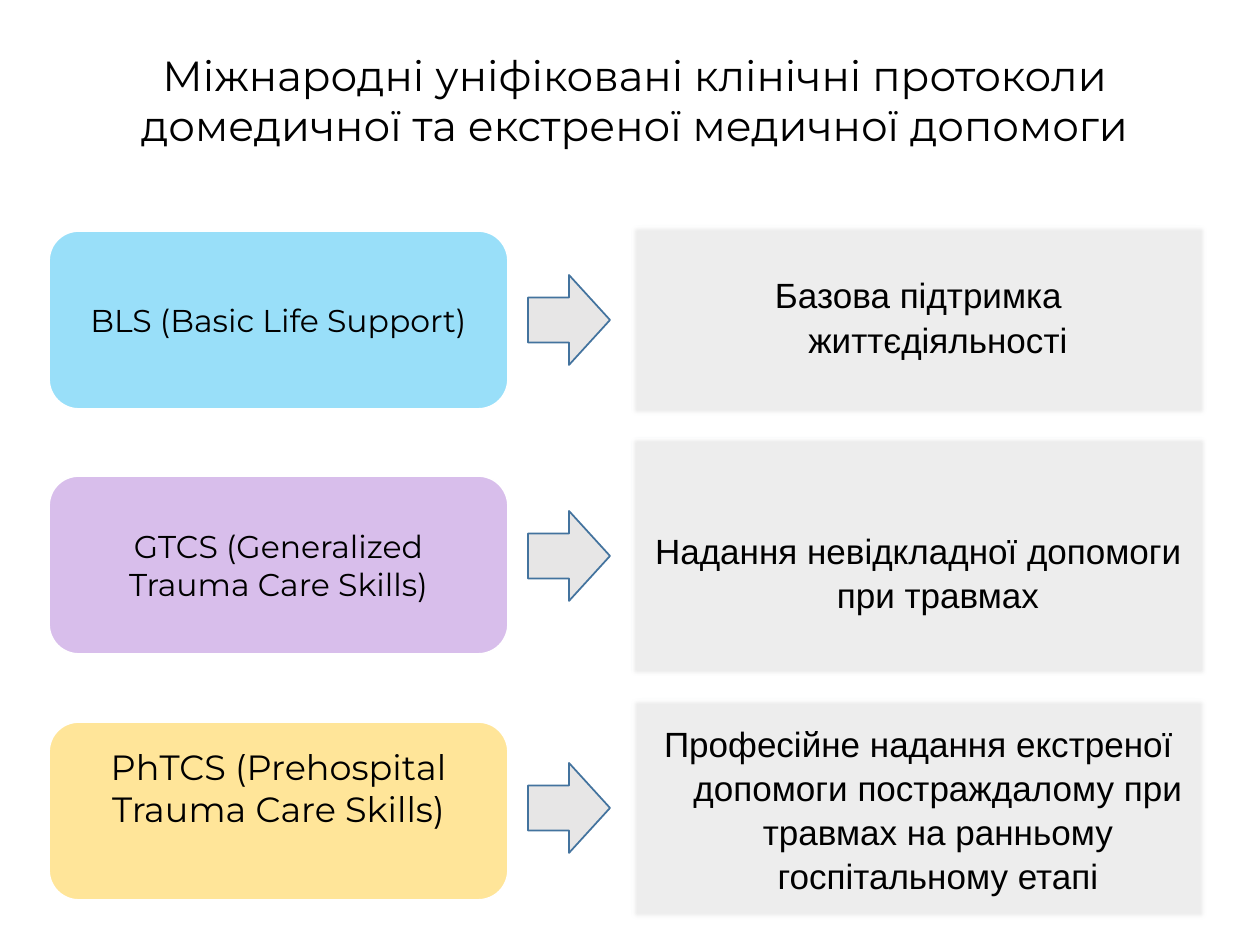
from lxml import etree
from pptx import Presentation, util as u
from pptx.dml.color import RGBColor
from pptx.enum import shapes, text
from pptx.oxml.ns import qn

PX = 914400 / 126
COLORS = {
    "black": "000000",
    "white": "FFFFFF",
    "panel": "EDEDED",
    "arrow": "E7E6E6",
    "outline": "43739E",
    "basic": "00B0F0",
    "trauma": "9E5ECE",
    "prehospital": "FFC000",
}
PROTOCOLS = [
    dict(
        tint="basic", card_top=231, arrow_top=275, panel_top=224, panel_height=192,
        name=["BLS (Basic Life Support)"], name_size=18, name_shift=0,
        meaning="Базова підтримка життєдіяльності", meaning_shift=-4,
    ),
    dict(
        tint="trauma", card_top=476, arrow_top=511, panel_top=437, panel_height=239,
        name=["GTCS (Generalized", "Trauma Care Skills)"], name_size=18, name_shift=0,
        meaning="Надання невідкладної допомоги при травмах", meaning_shift=15,
    ),
    dict(
        tint="prehospital", card_top=722, arrow_top=763, panel_top=697, panel_height=223,
        name=["PhTCS (Prehospital Trauma Care Skills)"], name_size=20, name_shift=-23,
        meaning="Професійне надання екстреної допомоги постраждалому "
                "при травмах на ранньому госпітальному етапі",
        meaning_shift=0,
    ),
]


def px(length):
    return u.Emu(round(length * PX))


def color(name):
    return RGBColor.from_string(COLORS[name])


def write(shape, lines, size, font="Montserrat", shift=0, hanging=0, spacing=None):
    frame = shape.text_frame
    frame.word_wrap = True
    frame.auto_size = text.MSO_AUTO_SIZE.NONE
    frame.vertical_anchor = text.MSO_ANCHOR.MIDDLE
    frame.margin_top = px(6 + max(0, 2 * shift))
    frame.margin_bottom = px(6 + max(0, -2 * shift))
    frame.text = "\n".join(lines)
    for paragraph in frame.paragraphs:
        paragraph.alignment = text.PP_ALIGN.CENTER
        paragraph.line_spacing = spacing
        if hanging:
            properties = paragraph._p.get_or_add_pPr()
            properties.set("marL", str(px(hanging)))
            properties.set("indent", str(-px(hanging)))
        for run in paragraph.runs:
            run.font.name = font
            run.font.size = u.Pt(size)
            run.font.color.rgb = color("black")


def add_block(slide, kind, box, fill, line):
    block = slide.shapes.add_shape(kind, *map(px, box))
    block.shadow.inherit = False
    block.fill.solid()
    block.fill.fore_color.rgb = color(fill)
    block.line.color.rgb = color(line)
    block.line.width = u.Pt(1)
    return block


def add_card(slide, protocol):
    card = add_block(slide, shapes.MSO_SHAPE.ROUNDED_RECTANGLE,
                     (49, protocol["card_top"], 459, 178), protocol["tint"], "white")
    tint = card.element.spPr.find(qn("a:solidFill")).find(qn("a:srgbClr"))
    etree.SubElement(tint, qn("a:alpha")).set("val", "40000")
    write(card, protocol["name"], protocol["name_size"], shift=protocol["name_shift"])


def add_arrow(slide, protocol):
    add_block(slide, shapes.MSO_SHAPE.RIGHT_ARROW,
              (528, protocol["arrow_top"], 82, 90), "arrow", "outline")


def add_panel(slide, protocol):
    panel = add_block(slide, shapes.MSO_SHAPE.RECTANGLE,
                      (630, protocol["panel_top"], 577, protocol["panel_height"]),
                      "panel", "outline")
    effects = panel.element.spPr.find(qn("a:effectLst"))
    etree.SubElement(effects, qn("a:softEdge")).set("rad", "31750")
    write(panel, [protocol["meaning"]], 20, font="Arial",
          shift=protocol["meaning_shift"], hanging=39, spacing=1.05)


def add_title(slide):
    title = slide.shapes.title
    title.left, title.top, title.width, title.height = map(px, (86, 42, 1097, 115))
    write(title, ["Міжнародні уніфіковані клінічні протоколи",
                  "домедичної та екстреної медичної допомоги"], 24)


def main():
    deck = Presentation()
    deck.slide_width, deck.slide_height = px(1260), px(945)
    slide = deck.slides.add_slide(deck.slide_layouts[5])
    add_title(slide)
    for protocol in PROTOCOLS:
        add_card(slide, protocol)
        add_arrow(slide, protocol)
        add_panel(slide, protocol)
    deck.save("out.pptx")


if __name__ == "__main__":
    main()
